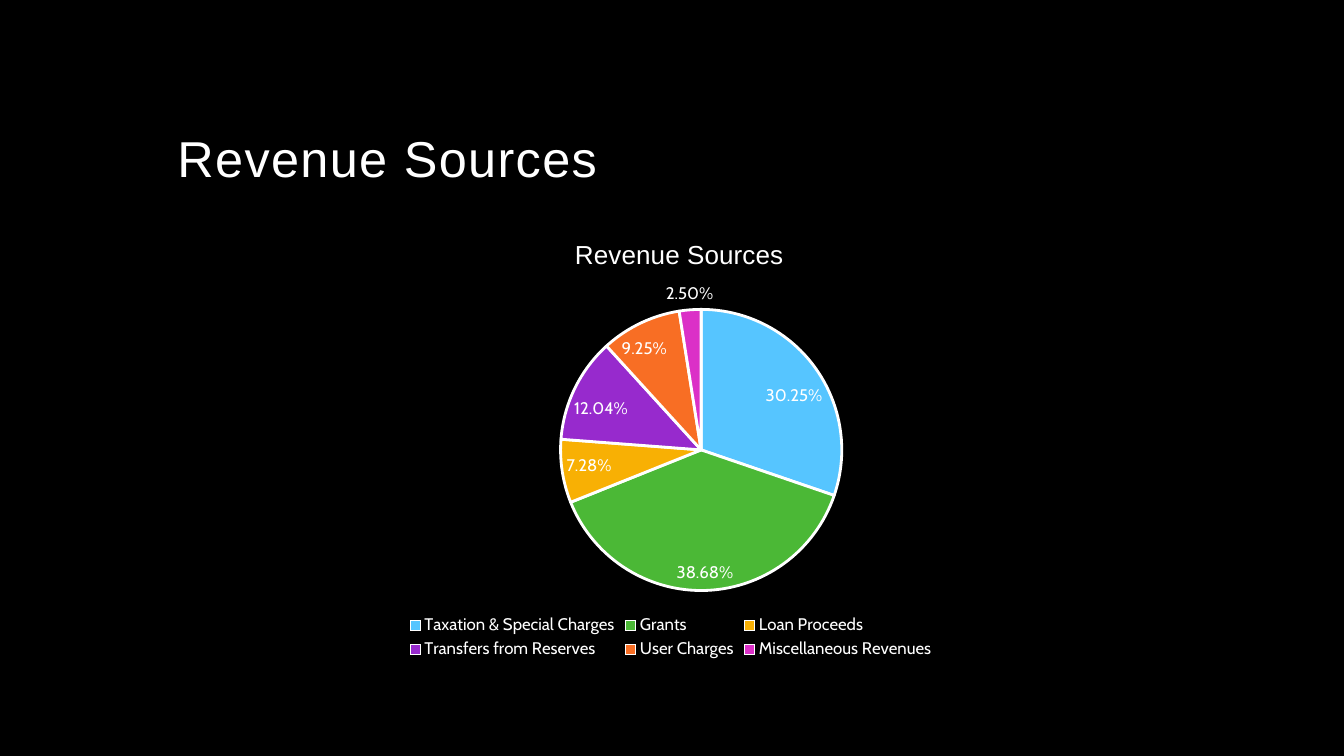
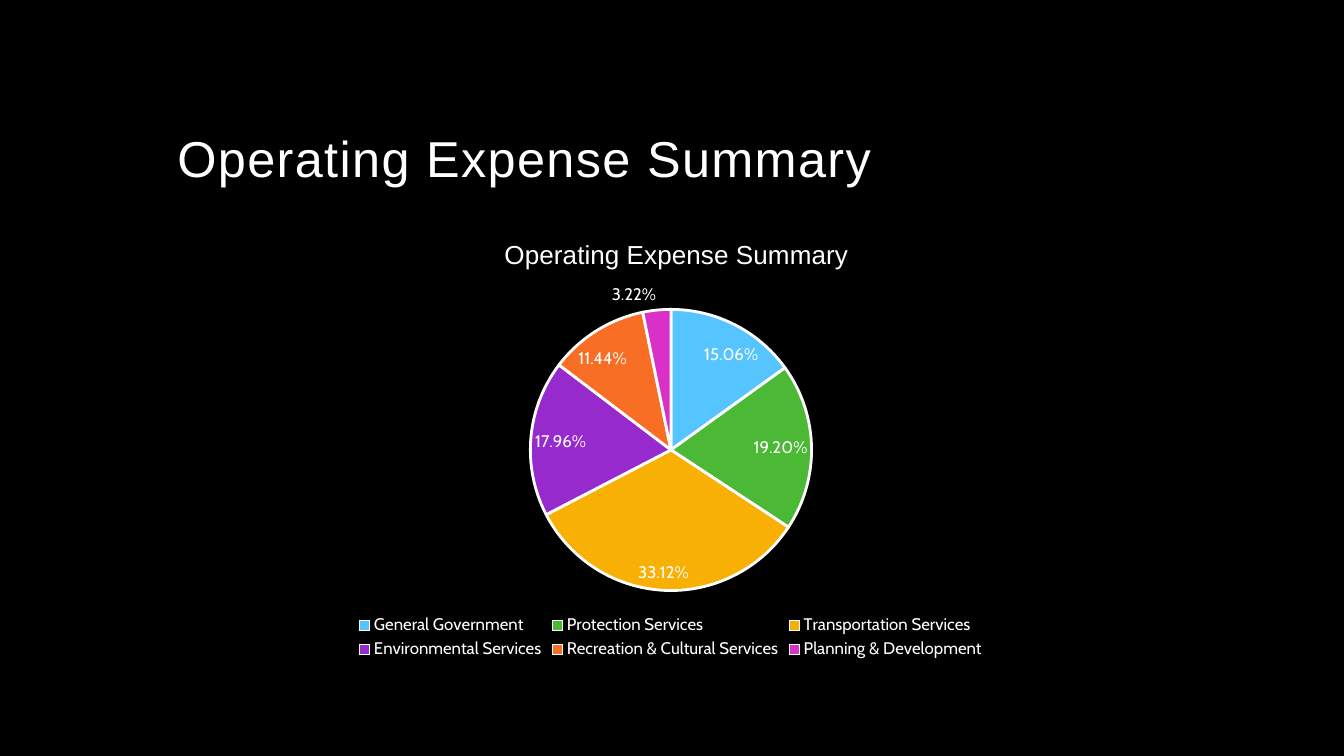
from pptx import Presentation
from pptx.chart.data import CategoryChartData
from pptx.dml.color import RGBColor
from pptx.enum.chart import XL_CHART_TYPE as ChartType
from pptx.enum.chart import XL_LABEL_POSITION as LabelPosition
from pptx.enum.chart import XL_LEGEND_POSITION as LegendPosition
from pptx.enum.text import MSO_ANCHOR as Anchor
from pptx.enum.text import PP_ALIGN as Align
from pptx.oxml import parse_xml
from pptx.oxml.ns import nsdecls, qn
from pptx.util import Inches, Pt

# Shared look
COLORS = {
    "background": "000000",
    "text": "FFFFFF",
    "sky": "56C5FF",
    "green": "4BB836",
    "amber": "F8B004",
    "purple": "972ACD",
    "orange": "F86E24",
    "pink": "DB30C7",
}
SLICES = ("sky", "green", "amber", "purple", "orange", "pink")
HEADING_FONT, BODY_FONT = "Arial", "Cabin"
TITLE_BOX = (1.66, 0.42, 10, 1.5)
CHART_BOX = (1.66, 2.08, 9.99, 4.5)

# Slide content; the lefts are fractions of the chart's width
BUDGET_SLIDES = [
    {
        "title": "Revenue Sources",
        "heading_left": 0.4,
        "pie_left": 0.39,
        "shares": {
            "Taxation & Special Charges": 0.3025,
            "Grants": 0.3868,
            "Loan Proceeds": 0.0728,
            "Transfers from Reserves": 0.1204,
            "User Charges": 0.0925,
            "Miscellaneous Revenues": 0.025,
        },
    },
    {
        "title": "Operating Expense Summary",
        "heading_left": 0.33,
        "pie_left": 0.36,
        "shares": {
            "General Government": 0.1506,
            "Protection Services": 0.192,
            "Transportation Services": 0.3312,
            "Environmental Services": 0.1796,
            "Recreation & Cultural Services": 0.1144,
            "Planning & Development": 0.0322,
        },
    },
]


def color(name):
    return RGBColor.from_string(COLORS[name])


def format_font(font, size, name=BODY_FONT):
    font.size = Pt(size)
    font.name = name
    font.bold = False
    font.color.rgb = color("text")


def write_text(frame, text, size, name=HEADING_FONT, align=None,
               line_spacing=None, tracking=None):
    paragraph = frame.paragraphs[0]
    paragraph.alignment = align
    paragraph.line_spacing = line_spacing
    run = paragraph.add_run()
    run.text = text
    format_font(run.font, size, name)
    if tracking:
        run.font._element.set("spc", str(int(tracking * 100)))


def set_layout(parent, index, **fractions):
    """Fix the place of a chart part as fractions of the chart's box."""
    for old in parent.findall(qn("c:layout")):
        parent.remove(old)
    target = '<c:layoutTarget val="inner"/>' if "w" in fractions else ""
    modes = "".join(f'<c:{key}Mode val="edge"/>' for key in "xy")
    values = "".join(f'<c:{key} val="{value}"/>'
                     for key, value in fractions.items())
    parent.insert(index, parse_xml(
        f'<c:layout {nsdecls("c")}><c:manualLayout>'
        f'{target}{modes}{values}</c:manualLayout></c:layout>'))


def place_title(slide, text, box):
    title = slide.shapes.title
    title.left, title.top, title.width, title.height = map(Inches, box)
    title.text_frame.word_wrap = True
    title.text_frame.vertical_anchor = Anchor.BOTTOM
    write_text(title.text_frame, text, 36, align=Align.LEFT,
               line_spacing=0.9, tracking=1)


def place_pie(slide, content, box):
    shares = CategoryChartData(number_format="0.00%")
    shares.categories = list(content["shares"])
    shares.add_series("Series 1", list(content["shares"].values()))
    chart = slide.shapes.add_chart(
        ChartType.PIE, *map(Inches, box), shares).chart
    format_font(chart.font, 10)

    # Heading inside the chart
    chart.has_title = True
    write_text(chart.chart_title.text_frame, content["title"], 18.6)
    set_layout(chart.chart_title._element, 1,
               x=content["heading_left"], y=0.05)

    # Slices
    pie = chart.plots[0]
    pie.vary_by_categories = True
    for index, name in enumerate(SLICES):
        slice_format = pie.series[0].points[index].format
        slice_format.fill.solid()
        slice_format.fill.fore_color.rgb = color(name)
        slice_format.line.color.rgb = color("text")
        slice_format.line.width = Pt(2)
    plot_area = chart._chartSpace.find(".//" + qn("c:plotArea"))
    set_layout(plot_area, 0, x=content["pie_left"], y=0.22, w=0.28, h=0.62)

    # Percentages
    pie.has_data_labels = True
    labels = pie.data_labels
    labels.show_value = True
    labels.show_percentage = False
    labels.number_format = "0.00%"
    labels.number_format_is_linked = False
    labels.position = LabelPosition.BEST_FIT
    format_font(labels.font, 12)

    # Legend
    chart.has_legend = True
    chart.legend.position = LegendPosition.BOTTOM
    chart.legend.include_in_layout = False
    format_font(chart.legend.font, 12)


def add_budget_slide(deck, content):
    slide = deck.slides.add_slide(deck.slide_layouts.get_by_name("Title Only"))
    place_title(slide, content["title"], TITLE_BOX)
    place_pie(slide, content, CHART_BOX)


def main():
    deck = Presentation()
    deck.slide_width, deck.slide_height = Inches(13.33), Inches(7.5)
    backdrop = deck.slide_master.background.fill
    backdrop.solid()
    backdrop.fore_color.rgb = color("background")
    for content in BUDGET_SLIDES:
        add_budget_slide(deck, content)
    deck.save("out.pptx")


if __name__ == "__main__":
    main()
